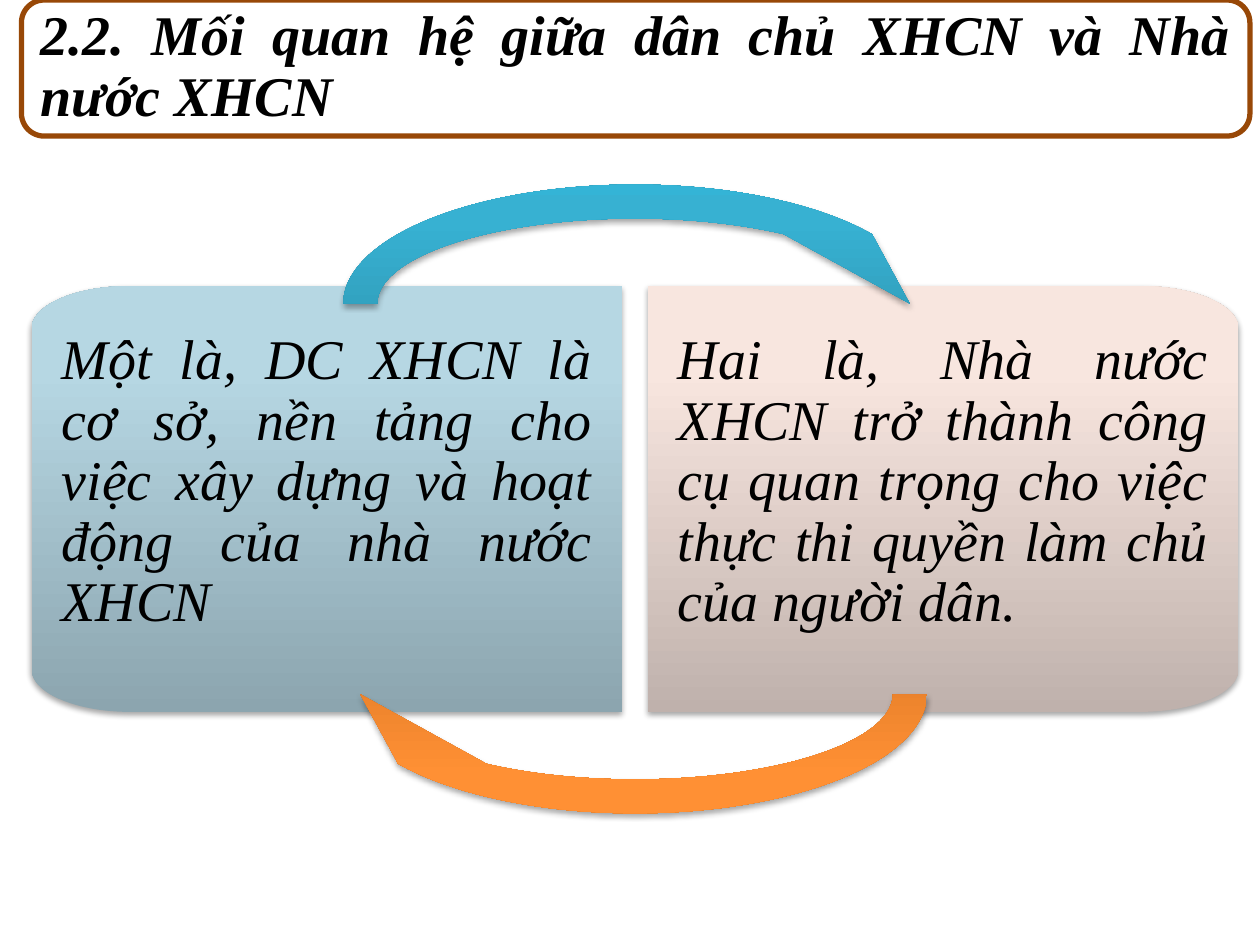
from copy import deepcopy
from math import cos, pi, sin

from lxml import etree
from pptx import Presentation
from pptx import util as u
from pptx.dml.color import RGBColor
from pptx.enum import shapes, text
from pptx.oxml.ns import qn

BLACK = RGBColor(0, 0, 0)
BROWN = RGBColor(0x98, 0x48, 0x07)
BLUES = [RGBColor.from_string(c) for c in ("8CA5AF", "B6D7E3", "B6D8E5")]
PINKS = [RGBColor.from_string(c) for c in ("BFB1AC", "F8E6DF", "FAE7DF")]
TEALS = [RGBColor.from_string(c) for c in ("2A88A2", "37B1D2", "34B4D6")]
ORANGES = [RGBColor.from_string(c) for c in ("CC6E20", "FF9034", "FF9136")]

HEADING = "2.2. Mối quan hệ giữa dân chủ XHCN và Nhà nước XHCN"
# statement, gradient from bottom to top, side (-1 left, 1 right)
PANELS = [
    ("Một là, DC XHCN là cơ sở, nền tảng cho việc xây dựng và hoạt động "
     "của nhà nước XHCN", BLUES, -1),
    ("Hai là, Nhà nước XHCN trở thành công cụ quan trọng cho việc thực thi "
     "quyền làm chủ của người dân.", PINKS, 1),
]
ARROWS = [(TEALS, -1, 0), (ORANGES, 1, 180)]  # gradient, above or below, rotation

CENTER_X, CENTER_Y = 5.04, 3.96
PANEL_W, PANEL_H, HALF_GAP = 4.69, 3.38, 0.1
CORNER_X, CORNER_Y, CORNER_STEPS = 0.78, 0.34, 24
ARROW_W, ARROW_H, ARROW_OFFSET = 4.9, 2.16, 1.55
ARROW_BEND = (0.125, 11.423, 204.577, 108, 0.125)


def paint(shape, colors):
    """Vertical three-stop gradient, no outline, soft shadow below."""
    shape.fill.gradient()
    stop_list = shape._element.spPr.find(".//" + qn("a:gsLst"))
    stop_list.append(deepcopy(stop_list[0]))
    for stop, color, position in zip(shape.fill.gradient_stops, colors, (0, 0.8, 1)):
        stop.color.rgb = color
        stop.position = position
    shape.fill.gradient_angle = 90
    shape.line.fill.background()
    shape.shadow.inherit = False
    effects = shape._element.spPr.find(qn("a:effectLst"))
    shadow = etree.SubElement(effects, qn("a:outerShdw"), blurRad="40000",
                              dist="23000", dir="5400000", rotWithShape="0")
    black = etree.SubElement(shadow, qn("a:srgbClr"), val="000000")
    etree.SubElement(black, qn("a:alpha"), val="35000")


def write(shape, words, anchor, bold=False):
    frame = shape.text_frame
    frame.word_wrap = True
    frame.vertical_anchor = anchor
    paragraph = frame.paragraphs[0]
    paragraph.text = words
    paragraph.alignment = text.PP_ALIGN.JUSTIFY
    paragraph.line_spacing = 0.9
    font = paragraph.font
    font.name, font.size = "Times New Roman", u.Pt(32)
    font.bold, font.italic = bold, True
    font.color.rgb = BLACK


def add_panel(slide, side):
    """Rectangle whose two outer corners are quarter ellipses."""
    inner, outer = HALF_GAP, HALF_GAP + PANEL_W
    half = PANEL_H / 2
    angles = [pi / 2 * i / CORNER_STEPS for i in range(CORNER_STEPS + 1)]
    arc = [(outer - CORNER_X * (1 - sin(a)), half - CORNER_Y * (1 - cos(a)))
           for a in angles]
    outline = ([(inner, -half)] + [(x, -y) for x, y in arc]
               + arc[::-1] + [(inner, half)])
    points = [(u.Inches(CENTER_X + side * x), u.Inches(CENTER_Y + y))
              for x, y in outline]
    builder = slide.shapes.build_freeform(*points[0])
    builder.add_line_segments(points[1:], close=True)
    return builder.convert_to_shape()


def main():
    deck = Presentation()
    deck.slide_width, deck.slide_height = u.Inches(10), u.Inches(7.5)
    slide = deck.slides.add_slide(deck.slide_layouts[6])

    heading = slide.shapes.add_shape(
        shapes.MSO_SHAPE.ROUNDED_RECTANGLE,
        u.Inches(0.17), 0, u.Inches(9.75), u.Inches(1.08))
    heading.shadow.inherit = False
    heading.fill.background()
    heading.line.color.rgb = BROWN
    heading.line.width = u.Pt(3)
    write(heading, HEADING, text.MSO_ANCHOR.MIDDLE, bold=True)

    for statement, colors, side in PANELS:
        panel = add_panel(slide, side)
        paint(panel, colors)
        write(panel, statement, text.MSO_ANCHOR.TOP)
        frame = panel.text_frame
        frame.margin_left = frame.margin_right = u.Inches(0.24)
        frame.margin_top = frame.margin_bottom = u.Inches(0.36)

    for colors, direction, rotation in ARROWS:
        middle = CENTER_Y + direction * ARROW_OFFSET
        arrow = slide.shapes.add_shape(
            shapes.MSO_SHAPE.CIRCULAR_ARROW,
            u.Inches(CENTER_X - ARROW_W / 2), u.Inches(middle - ARROW_H / 2),
            u.Inches(ARROW_W), u.Inches(ARROW_H))
        arrow.rotation = rotation
        for index, bend in enumerate(ARROW_BEND):
            arrow.adjustments[index] = bend
        paint(arrow, colors)

    deck.save("out.pptx")


if __name__ == "__main__":
    main()
